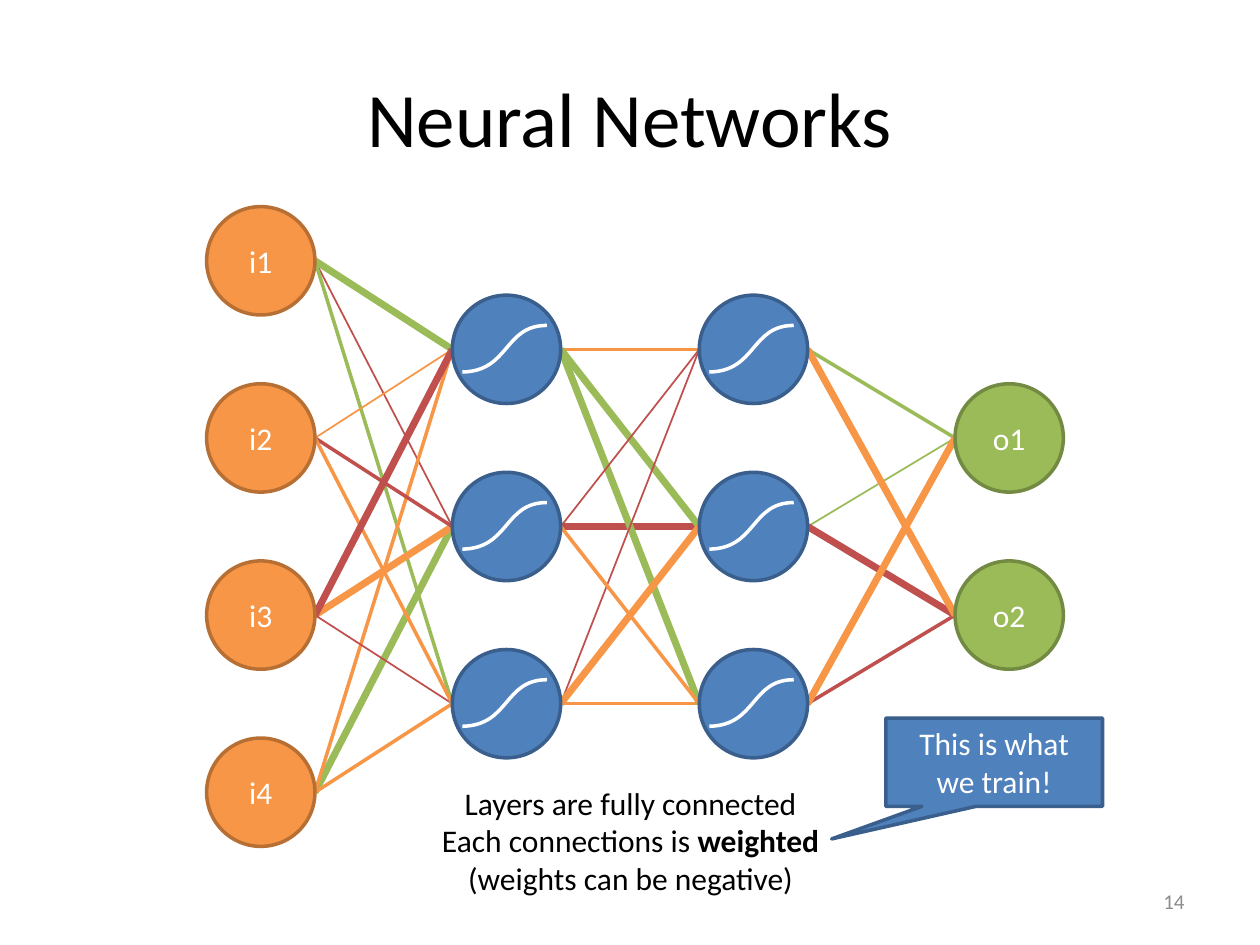
"""Build a slide of a fully connected neural network with weighted links."""
from dataclasses import dataclass
from typing import NamedTuple

from lxml.etree import SubElement
from pptx import Presentation
from pptx.dml.color import RGBColor
from pptx.enum.shapes import MSO_CONNECTOR, MSO_SHAPE
from pptx.enum.text import MSO_ANCHOR as Anchor, MSO_AUTO_SIZE as AutoSize, PP_ALIGN as Align
from pptx.oxml.ns import qn
from pptx.shapes.autoshape import Shape
from pptx.slide import Slide
from pptx.util import Emu, Inches, Pt


@dataclass(frozen=True)
class Theme:
    font: str = "Calibri"
    black: str = "000000"
    white: str = "FFFFFF"
    grey: str = "8C8C8C"
    blue: str = "4F81BD"
    blue_edge: str = "3A5F8C"
    green: str = "9BBB59"
    green_edge: str = "738A42"
    orange: str = "F79646"
    orange_edge: str = "B76F34"
    red: str = "C0504D"
    title_size: int = 44
    body_size: int = 18
    number_size: int = 12
    edge_width: int = 2


class Box(NamedTuple):
    column: float
    row: float
    columns: float
    rows: float


class Layer(NamedTuple):
    prefix: str
    column: float
    steps: range
    fill: str
    edge: str
    labelled: bool


class Link(NamedTuple):
    source: str
    target: str
    colour: str
    weight: int


class Label(NamedTuple):
    box: Box
    lines: list[str]
    size: int
    colour: str
    align: Align
    anchor: Anchor
    wrap: bool = True


THEME = Theme()
UNIT = Inches(0.1)
NODE_SIZE, FIRST_ROW, STEP_ROWS = 8.6, 16.4, 7.03
CURVE = Box(0.8, 2.4, 6.7, 3.7)
CURVE_POINTS = [(0.56, 0.98), (0.49, 0), (1, 0)]
CALLOUT = Box(70.3, 57, 17.2, 7)
CALLOUT_TIP = (-0.75, 0.87)
BOLD_WORD = "weighted"

LAYERS = [
    Layer("b", 55.5, range(1, 6, 2), THEME.blue, THEME.blue_edge, False),
    Layer("o", 75.8, range(2, 5, 2), THEME.green, THEME.green_edge, True),
    Layer("i", 16.4, range(0, 7, 2), THEME.orange, THEME.orange_edge, True),
    Layer("a", 35.9, range(1, 6, 2), THEME.blue, THEME.blue_edge, False),
]

LINKS = [
    Link("a1", "b1", THEME.orange, 2), Link("a2", "b2", THEME.red, 4),
    Link("a3", "b3", THEME.orange, 2), Link("b3", "o2", THEME.red, 2),
    Link("b2", "o1", THEME.green, 1), Link("b2", "o2", THEME.red, 4),
    Link("b1", "o1", THEME.green, 2), Link("i1", "a2", THEME.red, 1),
    Link("i1", "a3", THEME.green, 2), Link("i1", "a1", THEME.green, 4),
    Link("i4", "a2", THEME.green, 4), Link("i4", "a1", THEME.orange, 2),
    Link("i4", "a3", THEME.orange, 2), Link("i3", "a2", THEME.orange, 4),
    Link("i2", "a1", THEME.orange, 1), Link("i2", "a2", THEME.red, 2),
    Link("i3", "a3", THEME.red, 1), Link("i2", "a3", THEME.orange, 2),
    Link("i3", "a1", THEME.red, 4), Link("b1", "o2", THEME.orange, 4),
    Link("b3", "o1", THEME.orange, 4), Link("a1", "b2", THEME.green, 4),
    Link("a1", "b3", THEME.green, 4), Link("a2", "b1", THEME.red, 1),
    Link("a3", "b1", THEME.red, 1), Link("a2", "b3", THEME.orange, 2),
    Link("a3", "b2", THEME.orange, 4),
]

LABELS = [
    Label(Box(5, 3, 90, 12.5), ["Neural Networks"], THEME.title_size,
          THEME.black, Align.CENTER, Anchor.MIDDLE),
    Label(Box(33.9, 61.7, 32.3, 10.1),
          ["Layers are fully connected", "Each connections is weighted", "(weights can be negative)"],
          THEME.body_size, THEME.black, Align.CENTER, Anchor.TOP, False),
    Label(Box(71.7, 69.5, 23.3, 4), ["14"], THEME.number_size,
          THEME.grey, Align.RIGHT, Anchor.MIDDLE),
]


def place(box: Box) -> list[Emu]:
    return [Emu(round(length * UNIT)) for length in box]


def node_boxes() -> dict[str, Box]:
    return {
        f"{layer.prefix}{number}": Box(layer.column, FIRST_ROW + step * STEP_ROWS, NODE_SIZE, NODE_SIZE)
        for layer in LAYERS
        for number, step in enumerate(layer.steps, 1)
    }


def write(shape: Shape, lines: list[str], size: int, colour: str, align: Align, anchor: Anchor) -> None:
    frame = shape.text_frame
    frame.text = "\n".join(lines)
    frame.vertical_anchor = anchor
    for paragraph in frame.paragraphs:
        paragraph.alignment = align
        head, word, tail = paragraph.text.partition(BOLD_WORD)
        if word:
            paragraph.runs[0].text = head
            bold_run = paragraph.add_run()
            bold_run.text = word + tail
            bold_run.font.bold = True
        for run in paragraph.runs:
            run.font.name = THEME.font
            run.font.size = Pt(size)
            run.font.color.rgb = RGBColor.from_string(colour)


def add_label(slide: Slide, label: Label) -> None:
    shape = slide.shapes.add_textbox(*place(label.box))
    write(shape, label.lines, label.size, label.colour, label.align, label.anchor)
    shape.text_frame.word_wrap = label.wrap
    shape.text_frame.auto_size = AutoSize.NONE if label.wrap else AutoSize.SHAPE_TO_FIT_TEXT


def add_link(slide: Slide, link: Link, boxes: dict[str, Box]) -> None:
    source, target = boxes[link.source], boxes[link.target]
    ends = place(Box(source.column + NODE_SIZE, source.row + NODE_SIZE / 2,
                     target.column, target.row + NODE_SIZE / 2))
    connector = slide.shapes.add_connector(MSO_CONNECTOR.STRAIGHT, *ends)
    connector.line.color.rgb = RGBColor.from_string(link.colour)
    connector.line.width = Pt(link.weight)
    SubElement(connector.element.spPr, qn("a:effectLst"))


def add_filled(slide: Slide, kind: MSO_SHAPE, box: Box, fill: str, edge: str, text: str = "") -> Shape:
    shape = slide.shapes.add_shape(kind, *place(box))
    shape.shadow.inherit = False
    shape.fill.solid()
    shape.fill.fore_color.rgb = RGBColor.from_string(fill)
    shape.line.color.rgb = RGBColor.from_string(edge)
    shape.line.width = Pt(THEME.edge_width)
    if text:
        write(shape, [text], THEME.body_size, THEME.white, Align.CENTER, Anchor.MIDDLE)
    return shape


def add_curve(slide: Slide, node: Box) -> None:
    left, top, width, height = place(Box(node.column + CURVE.column, node.row + CURVE.row, *CURVE[2:]))
    builder = slide.shapes.build_freeform(left, top + height)
    builder.add_line_segments([(left + width, top)], close=False)
    shape = builder.convert_to_shape()
    segment = shape.element.find(".//" + qn("a:lnTo"))
    bezier = SubElement(segment.getparent(), qn("a:cubicBezTo"))
    for across, down in CURVE_POINTS:
        SubElement(bezier, qn("a:pt"), x=str(round(across * width)), y=str(round(down * height)))
    segment.getparent().remove(segment)
    shape.shadow.inherit = False
    shape.fill.background()
    shape.line.color.rgb = RGBColor.from_string(THEME.white)
    shape.line.width = Pt(THEME.edge_width)


def main() -> None:
    presentation = Presentation()
    presentation.slide_width, presentation.slide_height = Emu(100 * UNIT), Emu(75 * UNIT)
    slide = presentation.slides.add_slide(presentation.slide_layouts[6])
    boxes = node_boxes()
    for link in LINKS:
        add_link(slide, link, boxes)
    for layer in LAYERS:
        for number in range(1, len(layer.steps) + 1):
            name = f"{layer.prefix}{number}"
            add_filled(slide, MSO_SHAPE.OVAL, boxes[name], layer.fill, layer.edge, name if layer.labelled else "")
            if not layer.labelled:
                add_curve(slide, boxes[name])
    for label in LABELS:
        add_label(slide, label)
    callout = add_filled(slide, MSO_SHAPE.RECTANGULAR_CALLOUT, CALLOUT, THEME.blue, THEME.blue_edge,
                         "This is what we train!")
    callout.adjustments[0], callout.adjustments[1] = CALLOUT_TIP
    presentation.save("out.pptx")


if __name__ == "__main__":
    main()
